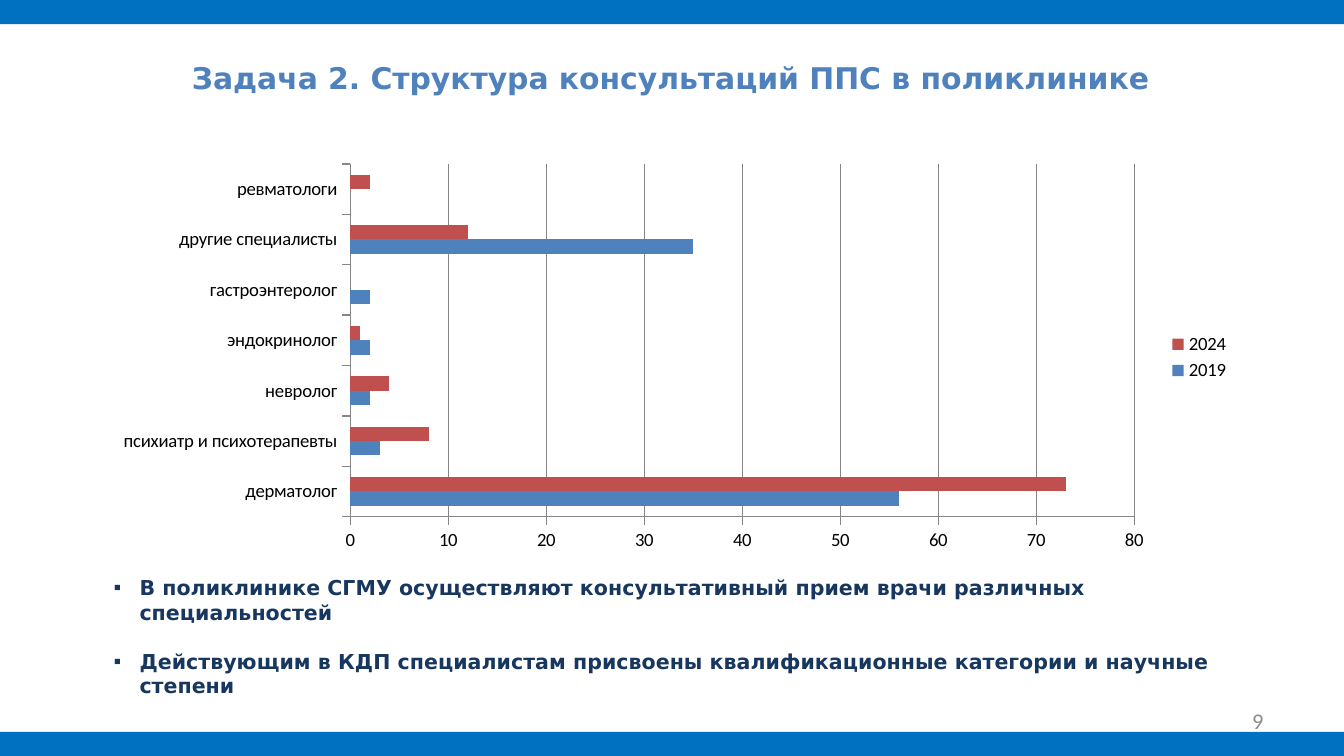
from typing import NamedTuple

from lxml import etree
from pptx import Presentation
from pptx.chart.data import CategoryChartData as ChartData
from pptx.dml.color import RGBColor
from pptx.enum.chart import XL_CHART_TYPE as Kind, XL_LEGEND_POSITION as Side
from pptx.enum.chart import XL_TICK_MARK as Tick
from pptx.enum.shapes import MSO_SHAPE as Shape
from pptx.enum.text import MSO_ANCHOR as Anchor, PP_ALIGN as Align
from pptx.oxml.ns import qn
from pptx.util import Inches, Pt


class Box(NamedTuple):
    left: float
    top: float
    width: float
    height: float


class Style(NamedTuple):
    face: str
    size: int
    color: str
    bold: bool = False


class Series(NamedTuple):
    name: str
    values: tuple
    color: str


WIDTH, BAND = 10, 0.18
HEIGHT = WIDTH * 9 / 16
BLUE, GREY = "0070C0", "868686"
TITLE = Style("DejaVu Sans", 16, "4F81BD", True)
BODY = Style("DejaVu Sans", 11, "17375E", True)
NUMBER = Style("Calibri", 12, "8C8C8C")
LABEL = Style("Calibri", 10, "000000")

POINTS = [
    "В поликлинике СГМУ осуществляют консультативный прием врачи различных специальностей",
    "Действующим в КДП специалистам присвоены квалификационные категории и научные степени",
]
DOCTORS = [
    "дерматолог", "психиатр и психотерапевты", "невролог", "эндокринолог",
    "гастроэнтеролог", "другие специалисты", "ревматологи",
]
YEARS = [
    Series("2019", (56, 3, 2, 2, 2, 35, None), "4F81BD"),
    Series("2024", (73, 8, 4, 1, None, 12, 2), "C0504D"),
]


def paint(target, color: str) -> None:
    """Give a fill or line format a solid colour."""
    target.solid()
    target.fore_color.rgb = RGBColor.from_string(color)


def set_font(font, style: Style) -> None:
    font.name = style.face
    font.size = Pt(style.size)
    font.bold = style.bold
    paint(font.fill, style.color)


def place(box: Box) -> list:
    return [Inches(side) for side in box]


def add_band(slide, top: float) -> None:
    band = slide.shapes.add_shape(
        Shape.RECTANGLE, *place(Box(0, top, WIDTH, BAND)))
    band.shadow.inherit = False
    paint(band.fill, BLUE)
    band.line.fill.background()


def add_text(slide, box: Box, lines: list, style: Style,
             align=Align.LEFT, anchor=Anchor.MIDDLE):
    frame = slide.shapes.add_textbox(*place(box)).text_frame
    frame.word_wrap = True
    frame.vertical_anchor = anchor
    frame.text = "\n".join(lines)
    for para in frame.paragraphs:
        para.alignment = align
        for run in para.runs:
            set_font(run.font, style)
    return frame


def add_bullet(para) -> None:
    props = para._p.get_or_add_pPr()
    props.set("marL", str(Inches(0.19)))
    props.set("indent", str(-Inches(0.19)))
    etree.SubElement(props, qn("a:buFont")).set("typeface", "Calibri")
    etree.SubElement(props, qn("a:buChar")).set("char", "▪")


def add_bars(slide, box: Box) -> None:
    data = ChartData()
    data.categories = DOCTORS
    for year in YEARS:
        data.add_series(year.name, year.values)
    chart = slide.shapes.add_chart(
        Kind.BAR_CLUSTERED, *place(box), data).chart
    set_font(chart.font, LABEL)
    chart.has_title = False
    chart.has_legend = True
    chart.legend.position = Side.RIGHT
    chart.legend.include_in_layout = False
    plot = chart.plots[0]
    plot.gap_width = 150
    plot.vary_by_categories = False
    for series, year in zip(plot.series, YEARS):
        paint(series.format.fill, year.color)
    for axis in (chart.category_axis, chart.value_axis):
        axis.major_tick_mark = Tick.OUTSIDE
        axis.minor_tick_mark = Tick.NONE
        paint(axis.format.line.fill, GREY)
    scale = chart.value_axis
    scale.minimum_scale, scale.maximum_scale = 0, 80
    scale.major_unit = 10
    scale.has_major_gridlines = True
    paint(scale.major_gridlines.format.line.fill, GREY)


def main() -> None:
    deck = Presentation()
    deck.slide_width, deck.slide_height = Inches(WIDTH), Inches(HEIGHT)
    slide = deck.slides.add_slide(deck.slide_layouts[6])
    for top in (0, HEIGHT - BAND):
        add_band(slide, top)
    add_text(slide, Box(7.17, 5.21, 2.33, 0.3), ["9"], NUMBER, Align.RIGHT)
    title = add_text(slide, Box(1.02, 0.18, 8.02, 0.8),
                     ["Задача 2. Структура консультаций ППС в поликлинике "],
                     TITLE, Align.CENTER)
    title.margin_left = title.margin_right = Inches(0.07)
    title.margin_top = title.margin_bottom = Inches(0.04)
    notes = add_text(slide, Box(0.75, 4.23, 8.74, 1.03), POINTS, BODY,
                     anchor=Anchor.TOP)
    for para in notes.paragraphs:
        add_bullet(para)
    notes.paragraphs[1].space_before = Pt(13)
    add_bars(slide, Box(0.75, 1.16, 8.5, 3))
    deck.save("out.pptx")


if __name__ == "__main__":
    main()
